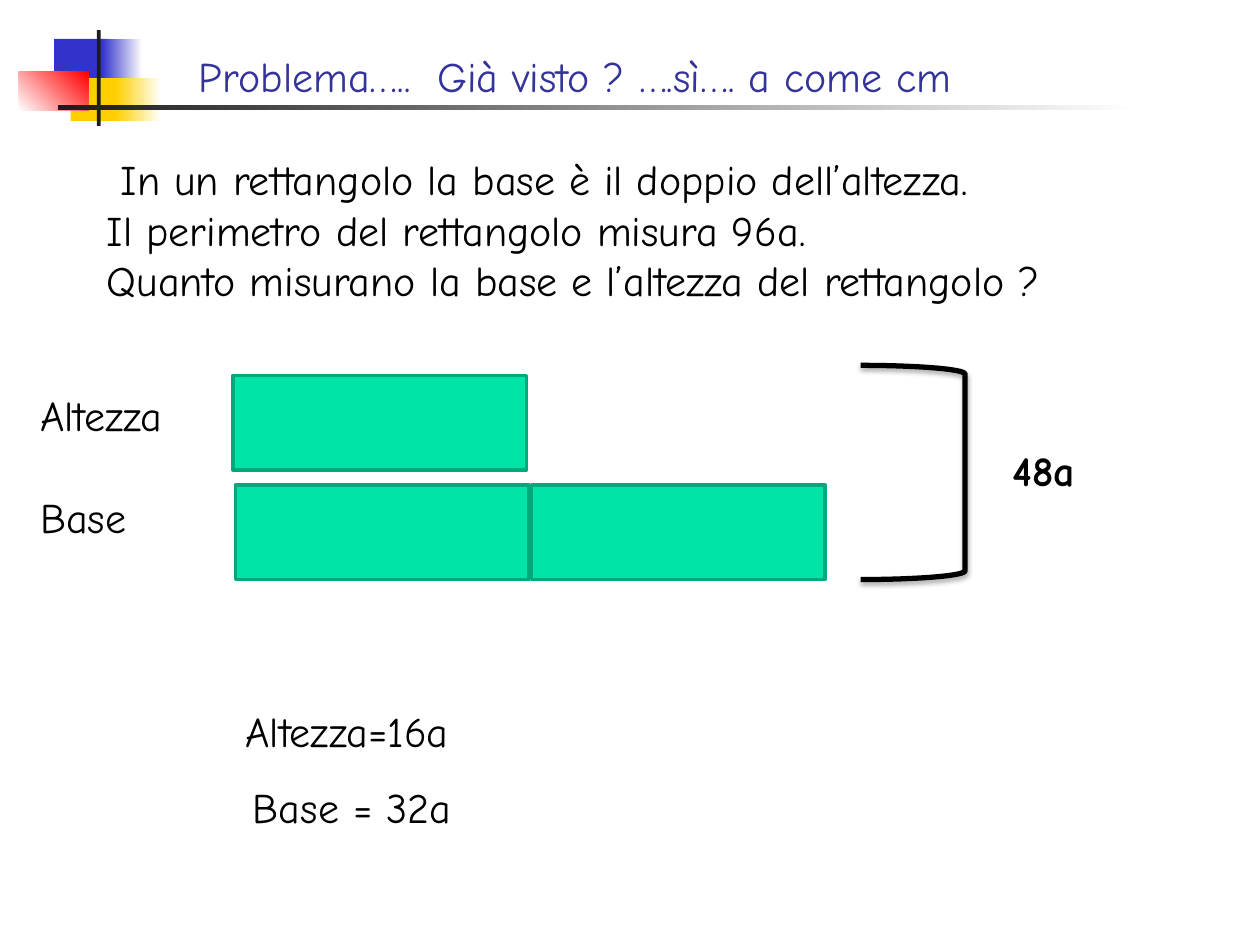
from lxml.etree import SubElement
from pptx import Presentation
from pptx.dml.color import RGBColor
from pptx.enum.shapes import MSO_SHAPE
from pptx.oxml.ns import qn
from pptx.util import Inches, Pt

COLUMNS, ROWS = 100, 75


def color(hex_string):
    """Turn a hex string into a colour."""
    return RGBColor.from_string(hex_string)


def write(paragraph, text, font="Comic Neue", size=24, ink="000000", bold=False, indent=0, tab=None):
    """Write one formatted paragraph, with an optional indent and tab stop."""
    run = paragraph.add_run()
    run.text = text
    run.font.name, run.font.size, run.font.bold = font, Pt(size), bold
    run.font.color.rgb = color(ink)
    properties = paragraph._p.get_or_add_pPr()
    properties.set("marL", "0")
    properties.set("indent", str(Inches(indent)))
    if tab:
        stops = SubElement(properties, qn("a:tabLst"))
        SubElement(stops, qn("a:tab"), pos=str(Inches(tab)), algn="l")


class Page:
    """Hold the style and the current slide, measured on a grid."""

    bar_fill, bar_edge = "00E4A8", "00A97C"
    ink, title_ink, rule = "000000", "333399", "1C1C1C"

    def __init__(self, deck):
        """Add a blank slide and derive its grid."""
        self.slide = deck.slides.add_slide(deck.slide_layouts[6])
        self.column = deck.slide_width / COLUMNS
        self.row = deck.slide_height / ROWS

    def place(self, left, top, width, height):
        """Convert grid columns and rows to slide lengths."""
        return [round(n * unit) for n, unit in
                zip((left, top, width, height), (self.column, self.row) * 2)]

    def text(self, cell, *lines, **style):
        """Add a text box; a line is a string or a pair of string and format."""
        frame = self.slide.shapes.add_textbox(*self.place(*cell)).text_frame
        frame.word_wrap = True
        for number, line in enumerate(lines):
            words, extra = line if isinstance(line, tuple) else (line, {})
            paragraph = frame.add_paragraph() if number else frame.paragraphs[0]
            write(paragraph, words, **{**style, **extra})

    def block(self, cell, fills, angle=0, edge=None, group=None):
        """Add a rectangle with one plain fill or a gradient of two."""
        shapes = (group or self.slide).shapes
        block = shapes.add_shape(MSO_SHAPE.RECTANGLE, *self.place(*cell))
        block.shadow.inherit = False
        if len(fills) == 1:
            block.fill.solid()
            block.fill.fore_color.rgb = color(fills[0])
        else:
            block.fill.gradient()
            block.fill.gradient_angle = angle
            for stop, shade in zip(block.fill.gradient_stops, fills):
                stop.color.rgb = color(shade)
        if edge:
            block.line.color.rgb = color(edge)
            block.line.width = Pt(2)
        else:
            block.line.fill.background()

    def bar(self, left, top):
        """Add one unit bar of the diagram."""
        self.block((left, top, 23.3, 7.5), [self.bar_fill], edge=self.bar_edge)

    def bracket(self, cell):
        """Add the right bracket with a soft shadow."""
        bracket = self.slide.shapes.add_shape(MSO_SHAPE.RIGHT_BRACKET, *self.place(*cell))
        bracket.fill.background()
        bracket.line.color.rgb = color(self.ink)
        bracket.line.width = Pt(3)
        bracket.shadow.inherit = False
        effects = bracket._element.spPr.find(qn("a:effectLst"))
        shadow = SubElement(effects, qn("a:outerShdw"), blurRad=str(Pt(3.1)),
                            dist=str(Pt(1.8)), dir="5400000", rotWithShape="0")
        shade = SubElement(shadow, qn("a:srgbClr"), val=self.ink)
        SubElement(shade, qn("a:alpha"), val="35000")

    def ornament(self):
        """Add the grouped squares and rules beside the title."""
        group = self.slide.shapes.add_group_shape()
        for cell, fills, angle in (
            ((4.3, 3.1, 4.3, 3.4), ["3333CC"], 0),
            ((8.1, 3.1, 3.2, 3.4), ["3333CC", "FFFFFF"], 0),
            ((5.6, 6.2, 4.2, 3.4), ["FFCF01"], 0),
            ((9.2, 6.2, 3.6, 3.4), ["FFCF01", "FFFFFF"], 0),
            ((1.5, 5.7, 5.5, 3.1), ["FFFFFF", "FF0000"], 45),
            ((7.7, 2.4, 0.3, 7.6), [self.rule], 0),
            ((4.6, 8.3, 85.8, 0.4), [self.rule, "FFFFFF"], 0),
        ):
            self.block(cell, fills, angle, group=group)


def main():
    """Build the rectangle problem slide."""
    deck = Presentation()
    deck.slide_width, deck.slide_height = Inches(10), Inches(7.5)
    page = Page(deck)
    page.text((7.5, 11.7, 86.7, 17.2),
              ("In un rettangolo la base è il doppio dell’altezza.", {"indent": 0.11}),
              ("Il perimetro del rettangolo misura 96a\t.", {"tab": 5.7}),
              "Quanto misurano la base e l’altezza del rettangolo ?")
    page.bar(18.5, 29.8)
    page.bracket((68.3, 29, 8.3, 17))
    page.text((79.4, 34.8, 18.6, 5), "48a", bold=True)
    page.ornament()
    page.text((13.7, 3.5, 81.5, 5), "Problema…..\tGià visto ? ….sì…. a come cm",
              ink=page.title_ink, indent=0.11, tab=2.12)
    for part in range(2):
        page.bar(18.7 + part * 23.5, 38.5)
    for label, top in (("Altezza", 30.4), ("Base", 38.5)):
        page.text((2.2, top, 18.3, 5.1), label)
    page.text((18.5, 55.5, 29.2, 5), "Altezza=16a")
    page.text((19.1, 61.5, 22.7, 5), "Base = 32a")
    deck.save("out.pptx")


if __name__ == "__main__":
    main()
